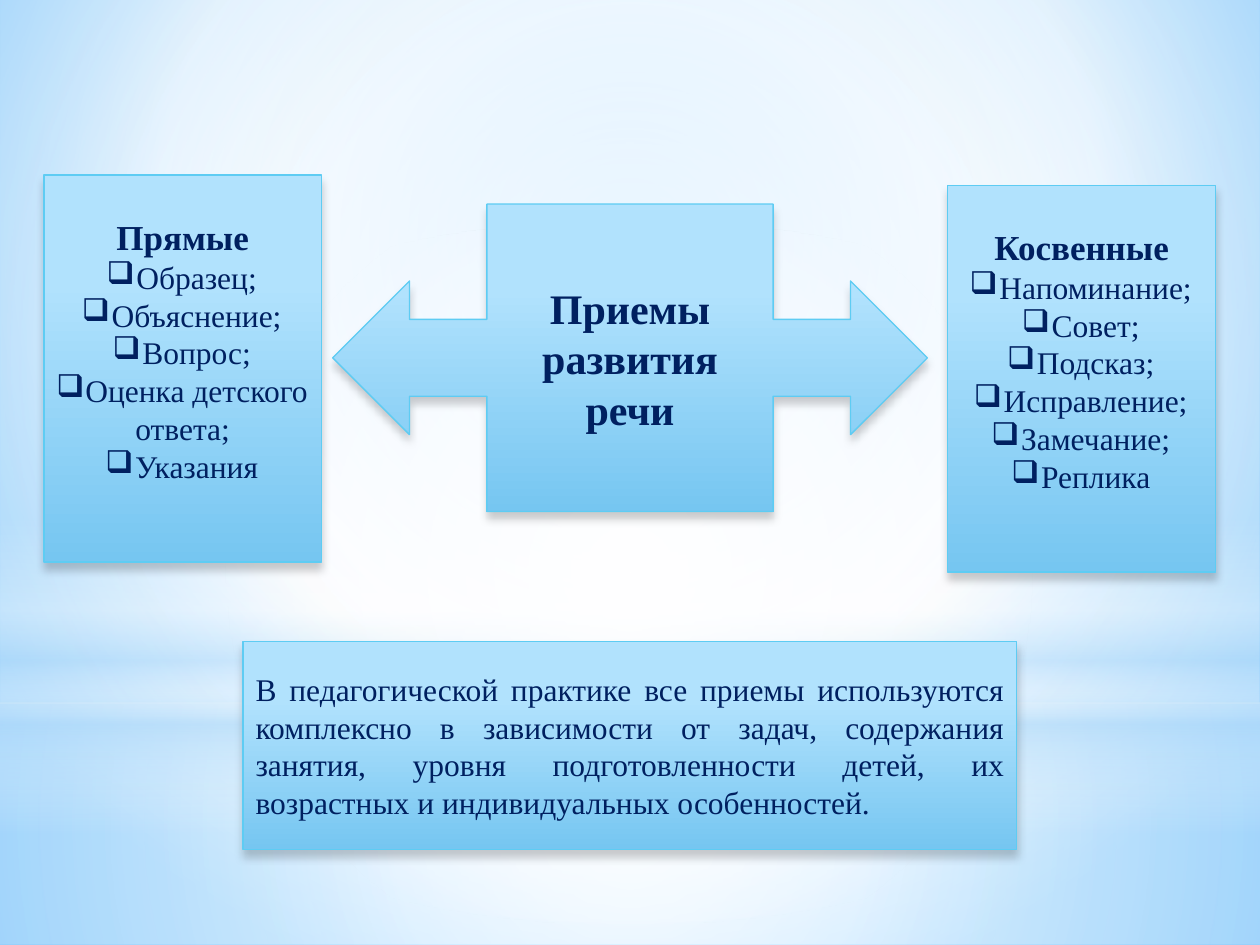
from lxml.etree import SubElement
from pptx import Presentation
from pptx.dml.color import RGBColor
from pptx.enum.shapes import MSO_SHAPE
from pptx.enum.text import MSO_ANCHOR, PP_ALIGN
from pptx.oxml.ns import qn
from pptx.util import Inches, Pt

PANEL = [(28, "B1E2FD"), (100, "76C6F1")]
MIDDLE = (50, 50, 50, 50)


def color(code):
    return RGBColor.from_string(code)


def assign(target, values):
    for name, value in values.items():
        setattr(target, name, value)


def add(parent, tag, **values):
    node = SubElement(parent, qn(tag))
    for name, value in values.items():
        node.set(name, str(value))
    return node


class Deck:
    edge = "5ECCF3"
    font = {"name": "Times New Roman"}
    ink = "002060"
    frame = {"word_wrap": True, "vertical_anchor": MSO_ANCHOR.MIDDLE}

    def __init__(self, width, height):
        self.file = Presentation()
        assign(self.file, {"slide_width": Inches(width), "slide_height": Inches(height)})
        self.slide = self.file.slides.add_slide(self.file.slide_layouts[6])

    def blend(self, fill, root, stops, focus=None):
        fill.solid()
        solid = root.find(".//" + qn("a:solidFill"))
        grad = solid.getparent().makeelement(qn("a:gradFill"), {"rotWithShape": "1"})
        solid.getparent().replace(solid, grad)
        chain = add(grad, "a:gsLst")
        for place, code, *alpha in stops:
            tint = add(add(chain, "a:gs", pos=place * 1000), "a:srgbClr", val=code)
            for part in alpha:
                add(tint, "a:alpha", val=part * 1000)
        if focus:
            sides = {side: part * 1000 for side, part in zip("ltrb", focus)}
            add(add(grad, "a:path", path="circle"), "a:fillToRect", **sides)
        else:
            add(grad, "a:lin", ang=5400000, scaled=0)

    def back(self, stops, focus):
        self.blend(self.slide.background.fill, self.slide._element, stops, focus)

    def shape(self, kind, place, stops, focus=None):
        item = self.slide.shapes.add_shape(kind, *map(Inches, place))
        item.shadow.inherit = False
        self.blend(item.fill, item._element.spPr, stops, focus)
        return item

    def glow(self, kind, place, stops, focus=None):
        self.shape(kind, place, stops, focus).line.fill.background()

    def panel(self, kind, place):
        item = self.shape(kind, place, PANEL)
        item.line.color.rgb = color(self.edge)
        item.line.width = Pt(0.75)
        effect = item._element.spPr.find(qn("a:effectLst"))
        shade = add(effect, "a:outerShdw", blurRad=Pt(5), dist=Pt(4), dir=5400000,
                    algn="ctr", rotWithShape=0)
        add(add(shade, "a:srgbClr", val="000000"), "a:alpha", val=20000)
        assign(item.text_frame, self.frame)
        return item.text_frame

    def label(self, para, text, size, bold=False, align=PP_ALIGN.CENTER):
        para.alignment = align
        run = para.add_run()
        run.text = text
        assign(run.font, {**self.font, "size": Pt(size), "bold": bold})
        run.font.color.rgb = color(self.ink)

    def note(self, kind, place, text, size, **style):
        self.label(self.panel(kind, place).paragraphs[0], text, size, **style)

    def roster(self, place, head, items):
        frame = self.panel(MSO_SHAPE.RECTANGLE, place)
        frame.margin_bottom = Inches(0.34)
        self.label(frame.paragraphs[0], head, 20, bold=True)
        for text in items:
            para = frame.add_paragraph()
            self.label(para, text, 18)
            add(para._p.get_or_add_pPr(), "a:buChar", char="❑")

    def save(self):
        self.file.save("out.pptx")


def main():
    deck = Deck(10, 7.5)
    deck.back([(0, "9ED5FF"), (60, "FFFFFF"), (100, "5BB9FF")], (20, 10, 20, 60))
    rect = MSO_SHAPE.RECTANGLE
    deck.glow(rect, (0, 5.58, 10, 1.92),
              [(0, "FFFFFF", 91), (37, "FFFFFF", 76), (100, "B4DCFA", 79)], MIDDLE)
    deck.glow(rect, (0, 0, 10, 5.58),
              [(0, "FFFFFF", 89), (48, "FFFFFF", 62), (100, "B4DCFA", 79)], MIDDLE)
    deck.glow(rect, (0, 4.12, 10, 2.5),
              [(0, "FFFFFF", 0), (29, "FFFFFF", 30), (45, "B4DCFA", 40),
               (55, "FFFFFF", 26), (65, "B4DCFA", 60), (100, "FFFFFF", 0)])
    deck.glow(MSO_SHAPE.OVAL, (0, 1.75, 10, 5.58),
              [(0, "FFFFFF"), (56, "FFFFFF", 0)], MIDDLE)

    deck.note(MSO_SHAPE.LEFT_RIGHT_ARROW_CALLOUT, (2.64, 1.62, 4.72, 2.44),
              "Приемы развития речи", 24, bold=True)
    deck.roster((0.35, 1.39, 2.2, 3.07), "Прямые",
                ["Образец;", "Объяснение;", "Вопрос;", "Оценка детского ответа;", "Указания"])
    deck.roster((7.52, 1.47, 2.13, 3.07), "Косвенные",
                ["Напоминание;", "Совет;", "Подсказ;", "Исправление;", "Замечание;", "Реплика"])
    deck.note(rect, (1.93, 5.09, 6.14, 1.65),
              "В педагогической практике все приемы используются комплексно в зависимости "
              "от задач, содержания занятия, уровня подготовленности детей, их возрастных "
              "и индивидуальных особенностей.", 18, align=PP_ALIGN.JUSTIFY)
    deck.save()


if __name__ == "__main__":
    main()
